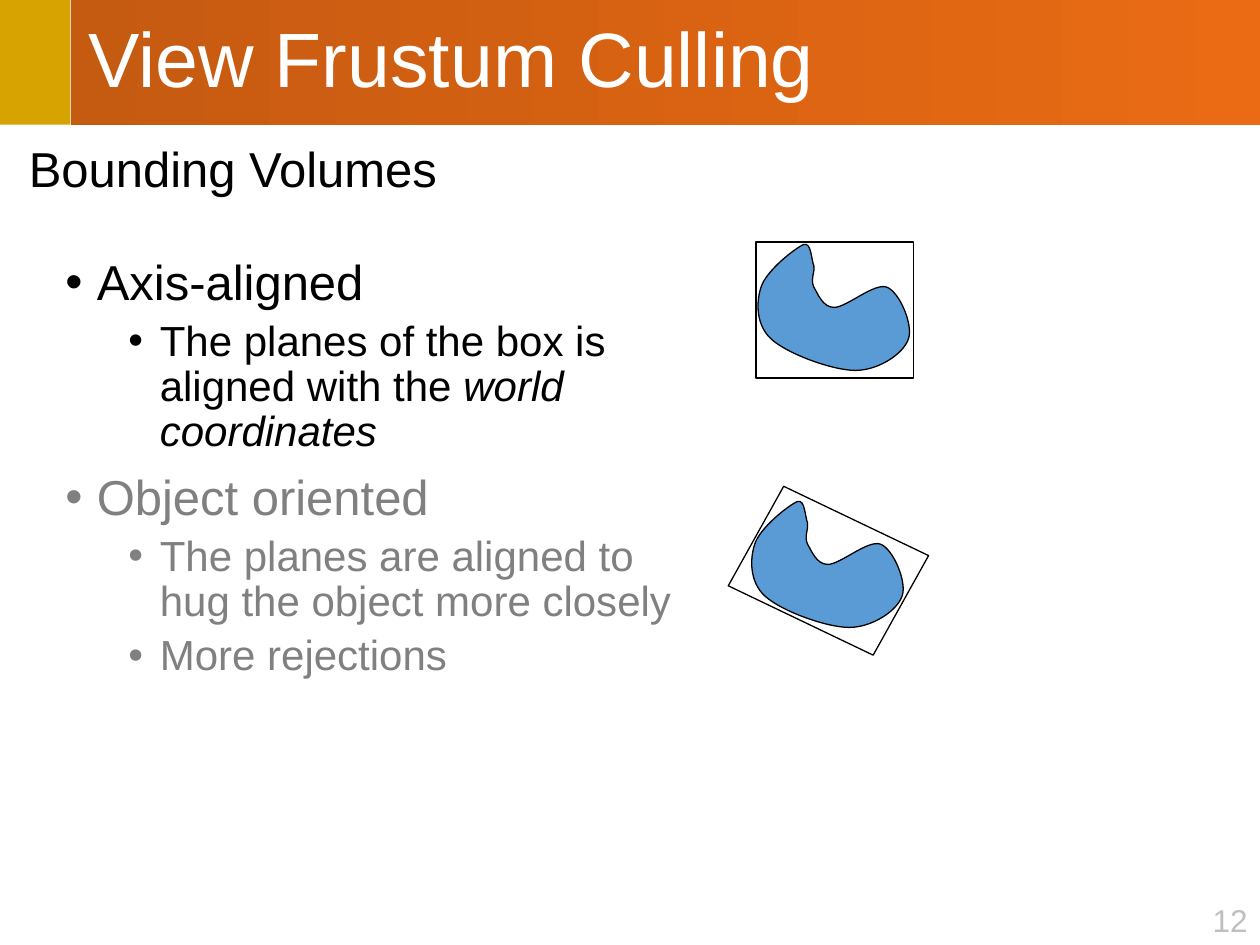
from lxml.etree import SubElement
from pptx import Presentation
from pptx.dml.color import RGBColor
from pptx.enum.shapes import MSO_SHAPE
from pptx.enum.text import MSO_ANCHOR, MSO_AUTO_SIZE, PP_ALIGN
from pptx.oxml.ns import qn
from pptx.util import Inches, Pt

BLACK = RGBColor(0x00, 0x00, 0x00)
WHITE = RGBColor(0xFF, 0xFF, 0xFF)
GRAY = RGBColor(0x80, 0x80, 0x80)
LIGHT_GRAY = RGBColor(0xBF, 0xBF, 0xBF)
GOLD = RGBColor(0xD6, 0xA3, 0x00)
DARK_ORANGE = RGBColor(0xC5, 0x5A, 0x11)
ORANGE = RGBColor(0xEA, 0x6B, 0x14)
BLUE = RGBColor(0x5B, 0x9B, 0xD5)

# Content
TITLE = "View Frustum Culling"
HEADING = "Bounding Volumes"
PAGE_NUMBER = "12"
# (level, color, [(text, italic), ...])
BULLETS = [
    (0, BLACK, [("Axis-aligned", False)]),
    (1, BLACK, [("The planes of the box is aligned with the ", False),
                ("world coordinates", True)]),
    (0, GRAY, [("Object oriented", False)]),
    (1, GRAY, [("The planes are aligned to hug the object more closely", False)]),
    (1, GRAY, [("More rejections", False)]),
]
# Text size, space before and left margin of each bullet level
LEVELS = [(28, 10, 0.25), (24, 5, 0.75)]

# Blob outline: start point, then two control points and an end point per curve
BLOB_START = (6.38, 1.94)
BLOB_CURVES = [
    [(6.31, 1.97), (6.08, 2.15), (6.04, 2.28)],
    [(6.00, 2.40), (6.00, 2.58), (6.12, 2.69)],
    [(6.25, 2.81), (6.61, 2.94), (6.79, 2.94)],
    [(6.97, 2.94), (7.17, 2.81), (7.21, 2.69)],
    [(7.25, 2.58), (7.14, 2.32), (7.04, 2.28)],
    [(6.94, 2.24), (6.72, 2.44), (6.62, 2.44)],
    [(6.53, 2.44), (6.49, 2.33), (6.46, 2.28)],
    [(6.43, 2.22), (6.47, 2.15), (6.46, 2.11)],
    [(6.44, 2.07), (6.44, 1.92), (6.38, 1.94)],
]
BLOB_OFFSETS = [(0, 0), (-0.05, 2.04)]
ALIGNED_BOX = (6, 1.92, 1.25, 1.08)
ORIENTED_BOX = [(5.78, 4.65), (6.22, 3.86), (7.37, 4.41), (6.93, 5.2)]


def place(shape, left, top, width, height):
    shape.left, shape.top = Inches(left), Inches(top)
    shape.width, shape.height = Inches(width), Inches(height)


def add_span(para, text, size, color, italic=False):
    span = para.add_run()
    span.text = text
    font_format = {"name": "Arial", "size": Pt(size), "italic": italic}
    for name, value in font_format.items():
        setattr(span.font, name, value)
    span.font.color.rgb = color


def format_para(para, **values):
    for name, value in values.items():
        setattr(para, name, value)


def indent(para, margin, first=0.0):
    properties = para._p.get_or_add_pPr()
    properties.set("marL", str(Inches(margin)))
    properties.set("indent", str(Inches(first)))
    return properties


def add_text_box(page, left, top, width, height, wrap=True):
    box = page.shapes.add_textbox(*map(Inches, (left, top, width, height)))
    box.text_frame.word_wrap = wrap
    return box.text_frame


def outline(shape, fill=None):
    shape.shadow.inherit = False
    if fill is None:
        shape.fill.background()
    else:
        shape.fill.solid()
        shape.fill.fore_color.rgb = fill
    shape.line.color.rgb = BLACK
    shape.line.width = Pt(0.75)


def add_polygon(page, start, points):
    builder = page.shapes.build_freeform(*map(Inches, start))
    builder.add_line_segments([tuple(map(Inches, point)) for point in points])
    return builder.convert_to_shape()


def add_blob(page, shift_x, shift_y):
    def shift(point):
        return point[0] + shift_x, point[1] + shift_y

    curves = [[shift(point) for point in curve] for curve in BLOB_CURVES]
    blob = add_polygon(page, shift(BLOB_START), [curve[-1] for curve in curves])
    # Turn each straight segment into a Bezier curve
    segments = list(blob._element.iter(qn("a:lnTo")))
    for segment, curve in zip(segments, curves):
        segment.tag = qn("a:cubicBezTo")
        segment.remove(segment[0])
        for x, y in curve:
            SubElement(segment, qn("a:pt"), x=str(Inches(x) - blob.left),
                       y=str(Inches(y) - blob.top))
    outline(blob, BLUE)


def main():
    deck = Presentation()
    deck.slide_width, deck.slide_height = Inches(10), Inches(7.5)
    page = deck.slides.add_slide(deck.slide_layouts[5])

    # Title band
    accent = page.shapes.add_shape(
        MSO_SHAPE.RECTANGLE, 0, 0, Inches(0.56), Inches(0.99))
    accent.shadow.inherit = False
    accent.fill.solid()
    accent.fill.fore_color.rgb = GOLD
    accent.line.fill.background()

    title = page.shapes.title
    place(title, 0.56, 0, 9.44, 0.99)
    title.fill.gradient()
    title.fill.gradient_angle = 0
    for stop, position, color in zip(
            title.fill.gradient_stops, (0, 1), (DARK_ORANGE, ORANGE)):
        stop.position = position
        stop.color.rgb = color
    frame = title.text_frame
    frame.auto_size = MSO_AUTO_SIZE.NONE
    frame.vertical_anchor = MSO_ANCHOR.MIDDLE
    para = frame.paragraphs[0]
    format_para(para, alignment=PP_ALIGN.LEFT, line_spacing=0.9)
    indent(para, 0.04)
    add_span(para, TITLE, 44, WHITE)

    # Heading
    para = add_text_box(page, 0.13, 1.1, 9.75, 5.98).paragraphs[0]
    format_para(para, line_spacing=0.9, space_before=Pt(10))
    add_span(para, HEADING, 28, BLACK)

    # Bullets
    frame = add_text_box(page, 0.42, 2, 5.08, 4.83)
    for index, (level, color, spans) in enumerate(BULLETS):
        para = frame.add_paragraph() if index else frame.paragraphs[0]
        size, space, margin = LEVELS[level]
        format_para(para, level=level, line_spacing=0.9, space_before=Pt(space))
        properties = indent(para, margin, -0.25)
        SubElement(properties, qn("a:buFont"), typeface="Arial")
        SubElement(properties, qn("a:buChar"), char="•")
        for text, italic in spans:
            add_span(para, text, size, color, italic)

    # Objects and their bounding boxes
    for offset in BLOB_OFFSETS:
        add_blob(page, *offset)
    outline(page.shapes.add_shape(
        MSO_SHAPE.RECTANGLE, *map(Inches, ALIGNED_BOX)))
    outline(add_polygon(page, ORIENTED_BOX[0], ORIENTED_BOX[1:]))

    # Page number
    para = add_text_box(page, 9.49, 7.1, 0.51, 0.4, wrap=False).paragraphs[0]
    format_para(para, alignment=PP_ALIGN.RIGHT)
    add_span(para, PAGE_NUMBER, 18, LIGHT_GRAY)

    deck.save("out.pptx")


if __name__ == "__main__":
    main()
